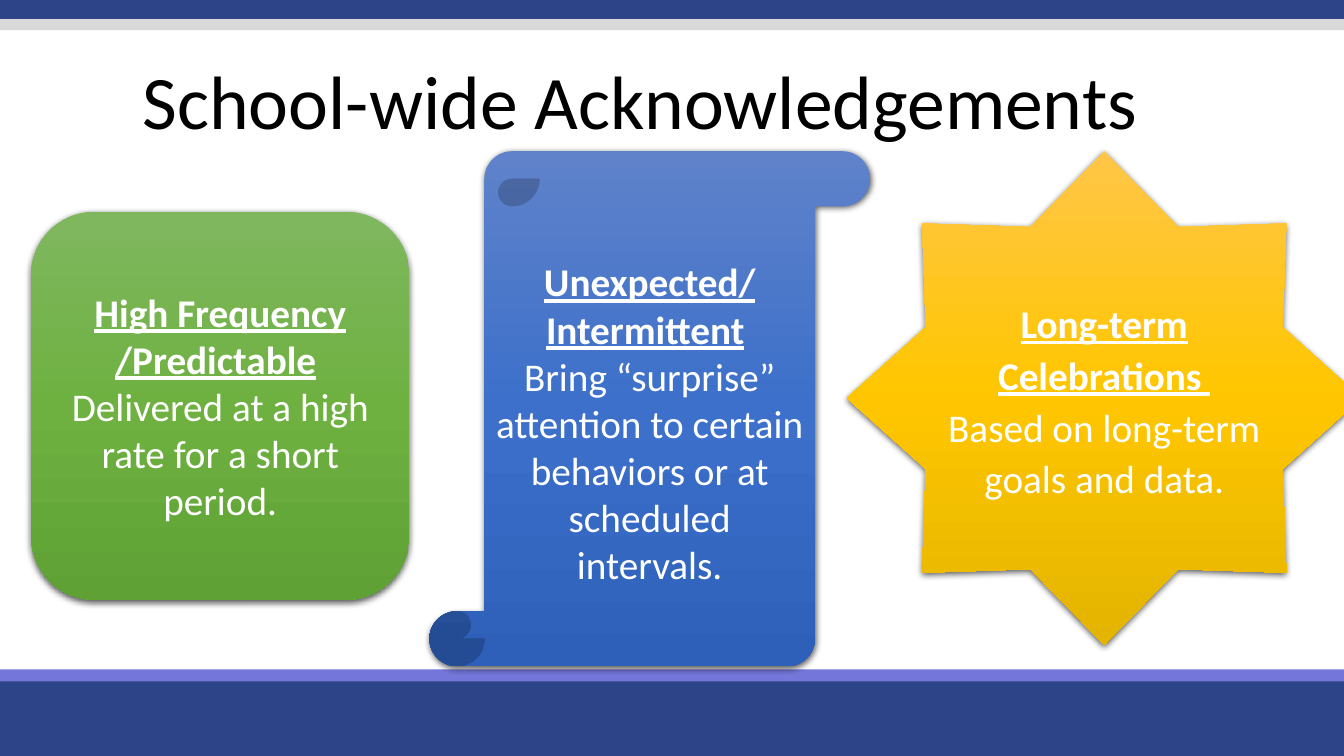
"""Build the school-wide acknowledgements slide."""
from copy import deepcopy
from dataclasses import dataclass

from lxml.etree import SubElement
from pptx import Presentation
from pptx.dml.color import RGBColor
from pptx.enum.shapes import MSO_SHAPE as Preset
from pptx.enum.text import MSO_ANCHOR as Anchor, PP_ALIGN as Align
from pptx.oxml.ns import qn
from pptx.util import Inches, Pt


@dataclass(frozen=True)
class Theme:
    font: str = "Calibri"
    title_size: int = 54
    card_size: int = 28
    ink: str = "000000"
    paper: str = "FFFFFF"
    navy: str = "2E4488"
    violet: str = "7476DA"
    silver: str = "D9D9D9"
    green: tuple = ("7FB75F", "6EB141", "5FA134")
    blue: tuple = ("5F82CA", "3C70CA", "2E60B9")
    gold: tuple = ("FFC647", "FFC600", "E3B400")


class SlideBuilder:
    COLUMNS, ROWS = 160, 90

    def __init__(self, presentation, theme):
        self.theme = theme
        self.column = presentation.slide_width / self.COLUMNS
        self.row = presentation.slide_height / self.ROWS
        self.slide = presentation.slides.add_slide(presentation.slide_layouts[6])

    def place(self, left, top, width, height):
        return (round(left * self.column), round(top * self.row),
                round(width * self.column), round(height * self.row))

    def shape(self, preset, box):
        shape = self.slide.shapes.add_shape(preset, *self.place(*box))
        shape.shadow.inherit = False
        shape.line.fill.background()
        return shape

    def band(self, top, height, color):
        band = self.shape(Preset.RECTANGLE, (0, top, self.COLUMNS, height))
        band.fill.solid()
        band.fill.fore_color.rgb = RGBColor.from_string(color)

    def style(self, paragraph, size, color, spacing, heading=False):
        paragraph.alignment = Align.CENTER
        paragraph.line_spacing = spacing
        for run in paragraph.runs:
            run.font.name = self.theme.font
            run.font.size = Pt(size)
            run.font.color.rgb = RGBColor.from_string(color)
            run.font.bold = run.font.underline = heading

    def title(self, text, box):
        frame = self.slide.shapes.add_textbox(*self.place(*box)).text_frame
        frame.word_wrap = True
        frame.vertical_anchor = Anchor.BOTTOM
        frame.text = text
        self.style(frame.paragraphs[0], self.theme.title_size, self.theme.ink, 0.9)

    def gradient(self, shape, colors):
        shape.fill.gradient()
        shape.fill.gradient_angle = 270
        first = shape.fill.gradient_stops[0]
        stops = shape._element.spPr.find(".//" + qn("a:gsLst"))
        stops.insert(1, deepcopy(stops[0]))
        for index, (stop, color) in enumerate(zip(shape.fill.gradient_stops, colors)):
            stop.position = index / (len(colors) - 1)
            stop.color.rgb = RGBColor.from_string(color)

    def shadow(self, shape):
        effects = shape._element.spPr.find(qn("a:effectLst"))
        shadow = SubElement(effects, qn("a:outerShdw"), blurRad=str(Pt(4.5)),
                            dist=str(Pt(1.5)), dir="5400000", algn="ctr", rotWithShape="0")
        color = SubElement(shadow, qn("a:srgbClr"), val=self.theme.ink)
        SubElement(color, qn("a:alpha"), val="63000")

    def card(self, preset, box, colors, heading, tail, body, spacing=1.0):
        card = self.shape(preset, box)
        self.gradient(card, colors)
        self.shadow(card)
        frame = card.text_frame
        frame.word_wrap = True
        frame.vertical_anchor = Anchor.MIDDLE
        frame.text = f"{heading}\n{body}"
        for paragraph, is_heading in zip(frame.paragraphs, (True, False)):
            self.style(paragraph, self.theme.card_size, self.theme.paper, spacing, is_heading)
        if tail:
            run = frame.paragraphs[0].add_run()
            run.text = tail
            run.font.size = Pt(self.theme.card_size)
            run.font.name = self.theme.font


def main():
    presentation = Presentation()
    presentation.slide_width, presentation.slide_height = Inches(13.33), Inches(7.5)
    theme = Theme()
    builder = SlideBuilder(presentation, theme)
    for band in ((80.4, 9.6, theme.navy), (79.68, 1.44, theme.violet),
                 (-0.36, 2.64, theme.navy), (2.28, 1.32, theme.silver)):
        builder.band(*band)
    builder.title("School-wide Acknowledgements ", (-2.76, 9.96, 160, 8.04))
    builder.card(Preset.ROUNDED_RECTANGLE, (3.72, 25.2, 45, 46.2), theme.green,
                 "High Frequency /Predictable", " ",
                 "Delivered at a high rate for a short period.")
    builder.card(Preset.STAR_8_POINT, (100.8, 18, 61.32, 58.8), theme.gold,
                 "Long-term Celebrations ", "",
                 "Based on long-term goals and data.", 1.1)
    builder.card(Preset.VERTICAL_SCROLL, (51.12, 18, 52.44, 61.32), theme.blue,
                 "Unexpected/ Intermittent", " ",
                 "Bring “surprise” attention to certain behaviors or at scheduled intervals.")
    presentation.save("out.pptx")


if __name__ == "__main__":
    main()
